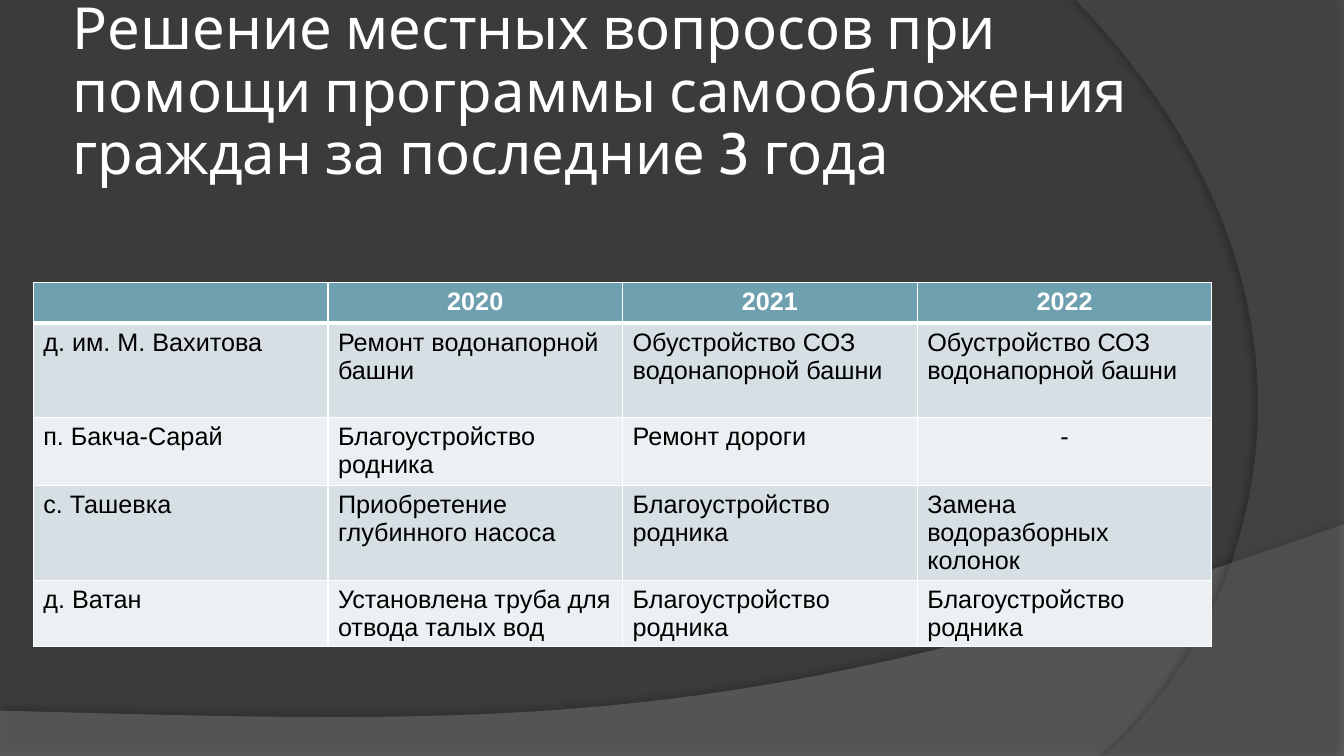
from lxml.etree import SubElement as Sub
from pptx import Presentation
from pptx.dml.color import RGBColor
from pptx.enum.text import MSO_ANCHOR as Anchor, PP_ALIGN as Align
from pptx.oxml.ns import qn
from pptx.util import Inches, Pt

HEAD = ["", "2020", "2021", "2022"]
ROWS = [
    ["д. им. М. Вахитова", "Ремонт водонапорной башни",
     "Обустройство СОЗ водонапорной башни", "Обустройство СОЗ водонапорной башни"],
    ["п. Бакча-Сарай", "Благоустройство родника", "Ремонт дороги", "-"],
    ["с. Ташевка", "Приобретение глубинного насоса",
     "Благоустройство родника", "Замена водоразборных колонок"],
    ["д. Ватан", "Установлена труба для отвода талых вод",
     "Благоустройство родника", "Благоустройство родника"],
]
HEIGHTS = [0.38, 0.94, 0.67, 0.94, 0.66]
BANDS = ["D5DFE4", "EBF0F2"]


def color(code):
    return RGBColor.from_string(code)


def style(para, font, size, code, bold=False):
    for run in para.runs:
        run.font.name, run.font.size, run.font.bold = font, Pt(size), bold
        run.font.color.rgb = color(code)


def curve(p0, p1, p2, p3, steps=48):
    """Points along a cubic Bezier curve, without its start."""
    for n in range(1, steps + 1):
        t = n / steps
        u = 1 - t
        yield tuple(u**3 * a + 3 * u * u * t * b + 3 * u * t * t * c + t**3 * d
                    for a, b, c, d in zip(p0, p1, p2, p3))


def sweep(slide, points, code, alpha, shade):
    """Translucent outline with a soft shadow: opacity, blur, distance, angle."""
    spots = [(Inches(x), Inches(y)) for x, y in points]
    build = slide.shapes.build_freeform(*spots[0])
    build.add_line_segments(spots[1:], close=True)
    shape = build.convert_to_shape()
    shape.fill.solid()
    shape.fill.fore_color.rgb = color(code)
    shape.line.fill.background()
    tint = shape._element.spPr.find(qn("a:solidFill"))[0]
    Sub(tint, qn("a:alpha"), val=str(alpha * 1000))
    dark, blur, dist, angle = shade
    shape.shadow.inherit = False
    effects = shape._element.spPr.find(qn("a:effectLst"))
    shadow = Sub(effects, qn("a:outerShdw"), blurRad=str(Pt(blur)),
                 dist=str(Pt(dist)), dir=str(angle * 60000), rotWithShape="0")
    black = Sub(shadow, qn("a:srgbClr"), val="000000")
    Sub(black, qn("a:alpha"), val=str(dark * 1000))


def backdrop(slide, wide, high):
    fill = slide.background.fill
    fill.solid()
    fill.fore_color.rgb = color("3B3B3B")
    # Wave along the bottom
    start, end = (wide, 5.2), (0, 7.05)
    wave = [(0, high), (wide, high), start,
            *curve(start, (7.45, 7.29), (5.21, 7.19), end)]
    sweep(slide, wave, "7F7F7F", 45, (35, 4, 3.5, 270))
    # Arc along the right side
    start, end = (10.95, high), (10.67, 0)
    arc = [(wide, 0), (wide, high), start,
           *curve(start, (12.46, 6.19), (13.57, 3), end)]
    sweep(slide, arc, "5E5E5E", 40, (45, 4, 4, 180))


def title(slide, text, left, top, wide, high):
    box = slide.shapes.add_textbox(*map(Inches, (left, top, wide, high)))
    frame = box.text_frame
    frame.word_wrap = True
    frame.vertical_anchor = Anchor.MIDDLE
    frame.margin_left = frame.margin_right = Inches(0.05)
    frame.margin_top = frame.margin_bottom = Inches(0.05)
    frame.text = text
    para = frame.paragraphs[0]
    para.line_spacing = 0.9
    style(para, "Cabin", 41.4, "FFFFFF")


def border(cell, widths):
    props = cell._tc.get_or_add_tcPr()
    for side, width in zip("LRTB", widths):
        line = Sub(props, qn("a:ln" + side), w=str(Pt(width)))
        Sub(Sub(line, qn("a:solidFill")), qn("a:srgbClr"), val="FFFFFF")


def works(slide, left, top, wide):
    data = [HEAD] + ROWS
    frame = slide.shapes.add_table(
        len(data), len(HEAD),
        *map(Inches, (left, top, wide, sum(HEIGHTS))))
    table = frame.table
    table.horz_banding = False
    for col in table.columns:
        col.width = Inches(wide / len(HEAD))
    for r, (texts, high) in enumerate(zip(data, HEIGHTS)):
        table.rows[r].height = Inches(high)
        head = r == 0
        for c, text in enumerate(texts):
            cell = table.cell(r, c)
            # The rule below the header is thicker
            border(cell, (1, 1, 3 if r == 1 else 1, 3 if head else 1))
            cell.fill.solid()
            cell.fill.fore_color.rgb = color("6EA0B0" if head else BANDS[(r - 1) % 2])
            cell.text_frame.text = text
            para = cell.text_frame.paragraphs[0]
            para.alignment = Align.CENTER if head or text == "-" else Align.LEFT
            style(para, "Arial", 18, "FFFFFF" if head else "000000", head)


def main():
    deck = Presentation()
    deck.slide_width, deck.slide_height = Inches(13.33), Inches(7.5)
    slide = deck.slides.add_slide(deck.slide_layouts[6])
    backdrop(slide, 13.33, 7.5)
    works(slide, 0.33, 2.8, 11.69)
    title(slide, "Решение местных вопросов при помощи программы самообложения "
          "граждан за последние 3 года", 0.67, 0.3, 10.89, 1.25)
    deck.save("out.pptx")


if __name__ == "__main__":
    main()
